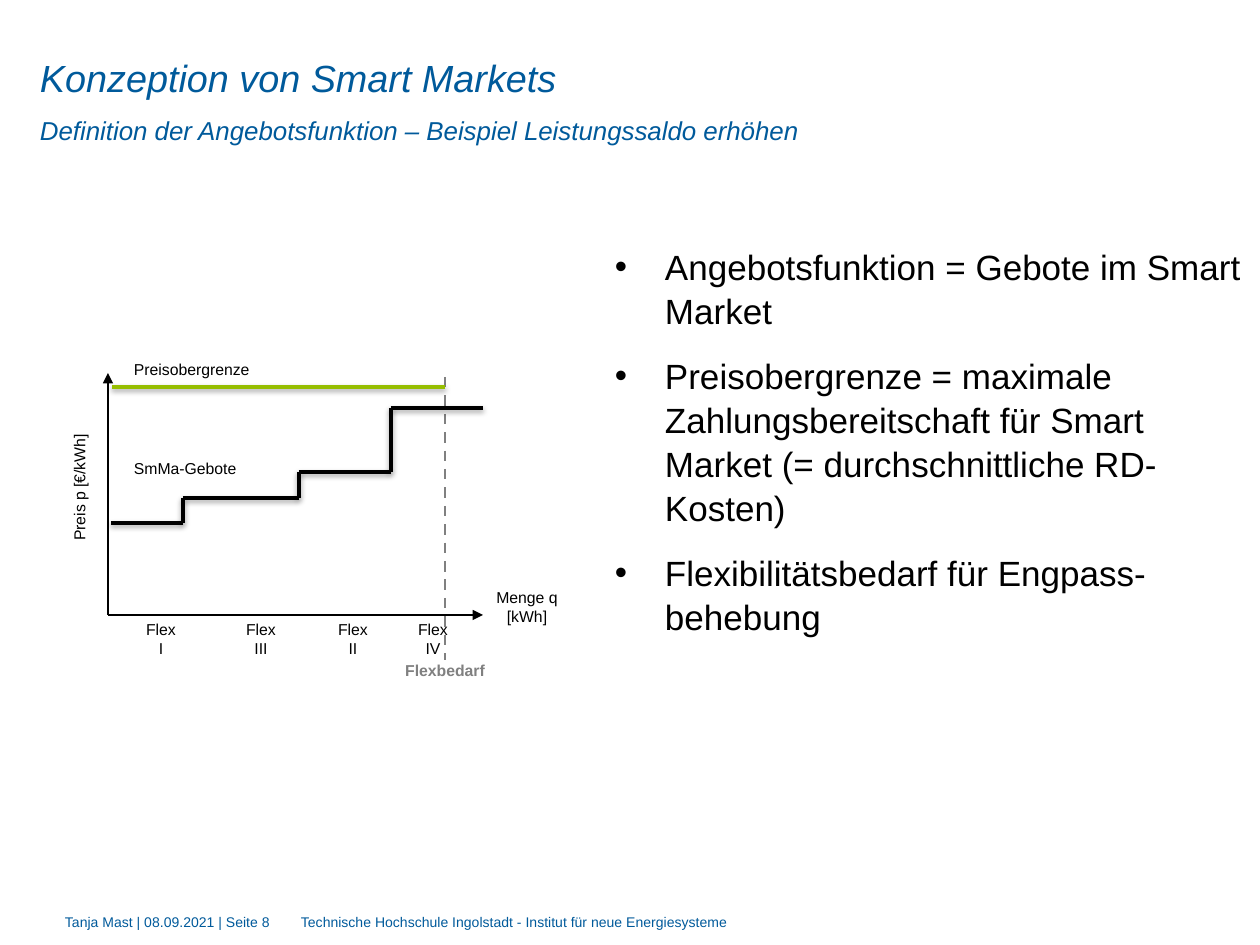
from itertools import pairwise

from lxml.etree import SubElement
from pptx import Presentation
from pptx.dml.color import RGBColor
from pptx.enum.dml import MSO_LINE
from pptx.enum.shapes import MSO_CONNECTOR
from pptx.enum.text import MSO_ANCHOR, PP_ALIGN
from pptx.oxml.ns import qn
from pptx.util import Pt

PX = 914400 / 126
FONT = "Arial"
COLORS = {
    "blue": "005A9B",
    "black": "000000",
    "gray": "808080",
    "green": "96BE00",
}


def px(value):
    return round(value * PX)


def color(name):
    return RGBColor.from_string(COLORS[name])


def add_text(slide, box, paragraphs, size=9, ink="black", bold=False, italic=False,
             align=PP_ALIGN.LEFT, anchor=MSO_ANCHOR.TOP, wrap=True, inset=(0, 0),
             rotation=0, line_spacing=None, gap=0, bullet_indent=0, tab=0):
    """Place one text box; box, inset, bullet_indent and tab are in px, gap in points."""
    shape = slide.shapes.add_textbox(*map(px, box))
    shape.rotation = rotation
    frame = shape.text_frame
    frame.word_wrap = wrap
    frame.vertical_anchor = anchor
    frame.margin_left = frame.margin_right = px(inset[0])
    frame.margin_top = frame.margin_bottom = px(inset[1])
    for index, text in enumerate(paragraphs):
        paragraph = frame.add_paragraph() if index else frame.paragraphs[0]
        properties = paragraph._p.get_or_add_pPr()
        if bullet_indent:
            properties.set("marL", str(px(bullet_indent)))
            properties.set("indent", str(-px(bullet_indent)))
            SubElement(properties, qn("a:buFont"), typeface=FONT)
            SubElement(properties, qn("a:buChar"), char="•")
        if tab:
            tabs = SubElement(properties, qn("a:tabLst"))
            SubElement(tabs, qn("a:tab"), pos=str(px(tab)), algn="l")
        paragraph.alignment = align
        if line_spacing:
            paragraph.line_spacing = line_spacing
        if index and gap:
            paragraph.space_before = Pt(gap)
        run = paragraph.add_run()
        run.text = text
        run.font.name = FONT
        run.font.size = Pt(size)
        run.font.bold = bold
        run.font.italic = italic
        run.font.color.rgb = color(ink)
    return shape


def add_line(slide, start, end, ink="black", width=2, dash=None, arrow=False, shadow=False):
    connector = slide.shapes.add_connector(
        MSO_CONNECTOR.STRAIGHT, *map(px, (*start, *end)))
    connector.line.color.rgb = color(ink)
    connector.line.width = Pt(width)
    if dash:
        connector.line.dash_style = dash
    properties = connector._element.spPr
    if arrow:
        SubElement(properties.find(qn("a:ln")), qn("a:tailEnd"), type="triangle")
    effects = SubElement(properties, qn("a:effectLst"))
    if shadow:
        outer = SubElement(effects, qn("a:outerShdw"), blurRad=str(Pt(3.1)),
                           dist=str(Pt(1.6)), dir="5400000", rotWithShape="0")
        shade = SubElement(outer, qn("a:srgbClr"), val=COLORS["black"])
        SubElement(shade, qn("a:alpha"), val="38000")
    return connector


def add_heading(slide, left, top, width):
    add_text(slide, (left, top, width, 45), ["Konzeption von Smart Markets"],
             size=21.6, ink="blue", italic=True, anchor=MSO_ANCHOR.MIDDLE)
    add_text(slide, (left, top + 47, width, 47),
             ["Definition der Angebotsfunktion – Beispiel Leistungssaldo erhöhen"],
             size=14.8, ink="blue", italic=True, line_spacing=1.4)


def add_supply_diagram(slide, left, top, width, height):
    """Draw the bid curve; the box is the area spanned by the two axes."""
    def at(x, y):
        return left + x, top + y

    def label(x, y, w, h, *lines, **style):
        add_text(slide, (*at(x, y), w, h), lines, **style)

    centered = {"align": PP_ALIGN.CENTER}
    add_line(slide, at(0, height), at(0, 0), width=0.75, arrow=True)
    add_line(slide, at(0, height), at(width, height), width=0.75, arrow=True)
    label(-83, 105, 108, 19, "Preis p [€/kWh]", rotation=270, wrap=False, **centered)
    label(width + 13, height - 27, 62, 38, "Menge q", "[kWh]", wrap=False, **centered)

    label_width = 114
    for name, center in (("I", 53), ("III", 153), ("II", 245), ("IV", 325)):
        label(center - label_width / 2, height + 5, label_width, 38,
              "Flex", name, **centered)

    demand_x = 337
    label(demand_x - 40, 288, 80, 19, "Flexbedarf",
          ink="gray", bold=True, wrap=False, **centered)
    add_line(slide, at(demand_x, 4), at(demand_x, 287),
             ink="gray", width=1.5, dash=MSO_LINE.DASH)

    step_edges = (3, 75, 191, 283, width)
    bid_levels = (150, 125, 99, 35)
    for (start, end), level in zip(pairwise(step_edges), bid_levels):
        add_line(slide, at(start, level), at(end, level), shadow=True)
    for edge, (lower, upper) in zip(step_edges[1:], pairwise(bid_levels)):
        add_line(slide, at(edge, upper), at(edge, lower), shadow=True)

    add_line(slide, at(demand_x, 14), at(4, 14), ink="green", shadow=True)
    label(13, -19, 262, 32, "Preisobergrenze", inset=(13, 6))
    label(13, 80, 129, 32, "SmMa-Gebote", inset=(13, 6))


def add_explanation(slide, left, top, width, height):
    add_text(slide, (left, top, width, height), [
        "Angebotsfunktion = Gebote im Smart Market",
        "Preisobergrenze = maximale Zahlungsbereitschaft für Smart Market "
        "(= durchschnittliche RD-Kosten)",
        "Flexibilitätsbedarf für Engpass-behebung",
    ], size=20, line_spacing=1.05, gap=12, bullet_indent=50)


def add_footer(slide, left, top, width, height):
    add_text(slide, (left, top, width, height), [
        "Tanja Mast | 08.09.2021 | Seite 8\t"
        "Technische Hochschule Ingolstadt - Institut für neue Energiesysteme",
    ], size=8, ink="blue", tab=236)


def main():
    presentation = Presentation()
    presentation.slide_width = px(1260)
    presentation.slide_height = px(945)
    slide = presentation.slides.add_slide(presentation.slide_layouts[6])
    add_footer(slide, 65, 914, 819, 16)
    add_heading(slide, 40, 55, 872)
    add_explanation(slide, 615, 243, 631, 654)
    add_supply_diagram(slide, 108, 373, 375, 242)
    presentation.save("out.pptx")


if __name__ == "__main__":
    main()
